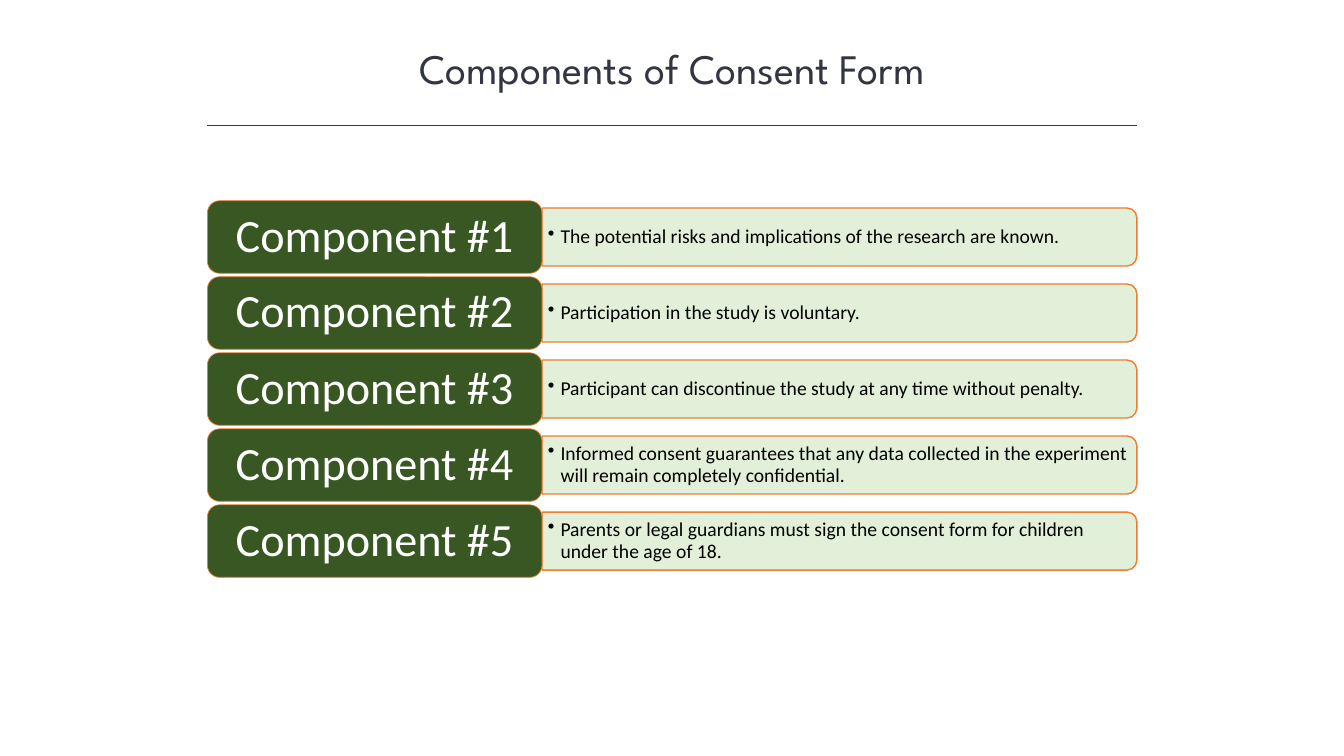
from dataclasses import dataclass

from lxml import etree
from pptx import Presentation
from pptx.dml.color import RGBColor as RGB
from pptx.enum.shapes import MSO_CONNECTOR as Connector, MSO_SHAPE as Shape
from pptx.enum.text import MSO_ANCHOR as Anchor, PP_ALIGN as Align
from pptx.oxml.ns import qn
from pptx.util import Pt


@dataclass(frozen=True)
class Theme:
    ink: RGB = RGB.from_string("323542")
    label_fill: RGB = RGB.from_string("385723")
    panel_fill: RGB = RGB.from_string("E2F0D9")
    border: RGB = RGB.from_string("ED7D31")
    label_text: RGB = RGB.from_string("FFFFFF")
    detail_text: RGB = RGB.from_string("000000")
    title_font: str = "League Spartan"
    body_font: str = "Calibri"
    title_size: float = 30
    label_size: float = 33
    detail_size: float = 14


THEME = Theme()
COMPONENTS = [
    "The potential risks and implications of the research are known.",
    "Participation in the study is voluntary.",
    "Participant can discontinue the study at any time without penalty.",
    "Informed consent guarantees that any data collected in the experiment "
    "will remain completely confidential.",
    "Parents or legal guardians must sign the consent form for children "
    "under the age of 18.",
]


def write(shape, text, font, size, color, align=Align.LEFT, margins=(7.2, 3.6)):
    """Put one run in the shape, with (side, top and bottom) margins."""
    frame = shape.text_frame
    frame.word_wrap = True
    frame.vertical_anchor = Anchor.MIDDLE
    frame.margin_left = frame.margin_right = Pt(margins[0])
    frame.margin_top = frame.margin_bottom = Pt(margins[1])
    paragraph = frame.paragraphs[0]
    paragraph.alignment = align
    run = paragraph.add_run()
    run.text = text
    run.font.name = font
    run.font.size = Pt(size)
    run.font.color.rgb = color
    return paragraph


def add_bullet(paragraph, indent):
    properties = paragraph._p.get_or_add_pPr()
    properties.set("marL", str(Pt(indent)))
    properties.set("indent", str(-Pt(indent)))
    etree.SubElement(properties, qn("a:buChar")).set("char", "•")


def add_filled(slide, preset, box, fill, line_width):
    shape = slide.shapes.add_shape(preset, *map(Pt, box))
    shape.shadow.inherit = False
    shape.fill.solid()
    shape.fill.fore_color.rgb = fill
    shape.line.color.rgb = THEME.border
    shape.line.width = Pt(line_width)
    return shape


def add_header(slide, left, top, width, rule_top):
    title_width = 720
    title_left = left + (width - title_width) / 2
    title = slide.shapes.add_textbox(Pt(title_left), Pt(top), Pt(title_width), Pt(44))
    write(title, "Components of Consent Form", THEME.title_font,
          THEME.title_size, THEME.ink, Align.CENTER)
    rule = slide.shapes.add_connector(
        Connector.STRAIGHT, Pt(left), Pt(rule_top), Pt(left + width), Pt(rule_top))
    rule.line.color.rgb = THEME.ink
    rule.line.width = Pt(1)
    etree.SubElement(rule._element.spPr, qn("a:effectLst"))


def add_component(slide, left, top, width, height, label, detail):
    label_width = 0.36 * width
    panel_left, panel_width = left + label_width, width - label_width
    panel_height = 0.8 * height
    middle = top + height / 2

    # The panel is an upright tab turned a quarter about its centre.
    panel = add_filled(
        slide, Shape.ROUND_2_SAME_RECTANGLE,
        (panel_left + (panel_width - panel_height) / 2, middle - panel_width / 2,
         panel_height, panel_width),
        THEME.panel_fill, 1)
    panel.rotation = 90

    detail_height = panel_height - 4
    detail_box = slide.shapes.add_textbox(
        Pt(panel_left), Pt(middle - detail_height / 2),
        Pt(panel_width - 2), Pt(detail_height))
    paragraph = write(detail_box, detail, THEME.body_font, THEME.detail_size,
                      THEME.detail_text, margins=(4.2, 2.1))
    paragraph.line_spacing = 0.9
    add_bullet(paragraph, 9)

    label_box = add_filled(slide, Shape.ROUNDED_RECTANGLE,
                           (left, top, label_width, height), THEME.label_fill, 0.5)
    paragraph = write(label_box, label, THEME.body_font, THEME.label_size,
                      THEME.label_text, Align.CENTER, margins=(10, 5))
    paragraph.line_spacing = 0.9


def add_component_list(slide, left, top, width, height):
    gap = 2.5
    row_height = (height + gap) / len(COMPONENTS) - gap
    for index, detail in enumerate(COMPONENTS):
        add_component(slide, left, top + index * (row_height + gap), width,
                      row_height, f"Component #{index + 1}", detail)


def main():
    presentation = Presentation()
    presentation.slide_width, presentation.slide_height = Pt(960), Pt(540)
    slide = presentation.slides.add_slide(presentation.slide_layouts[6])
    left, width = 148.2, 663.8
    add_header(slide, left, 26.6, width, 89.5)
    add_component_list(slide, left, 143.4, width, 269)
    presentation.save("out.pptx")


if __name__ == "__main__":
    main()
